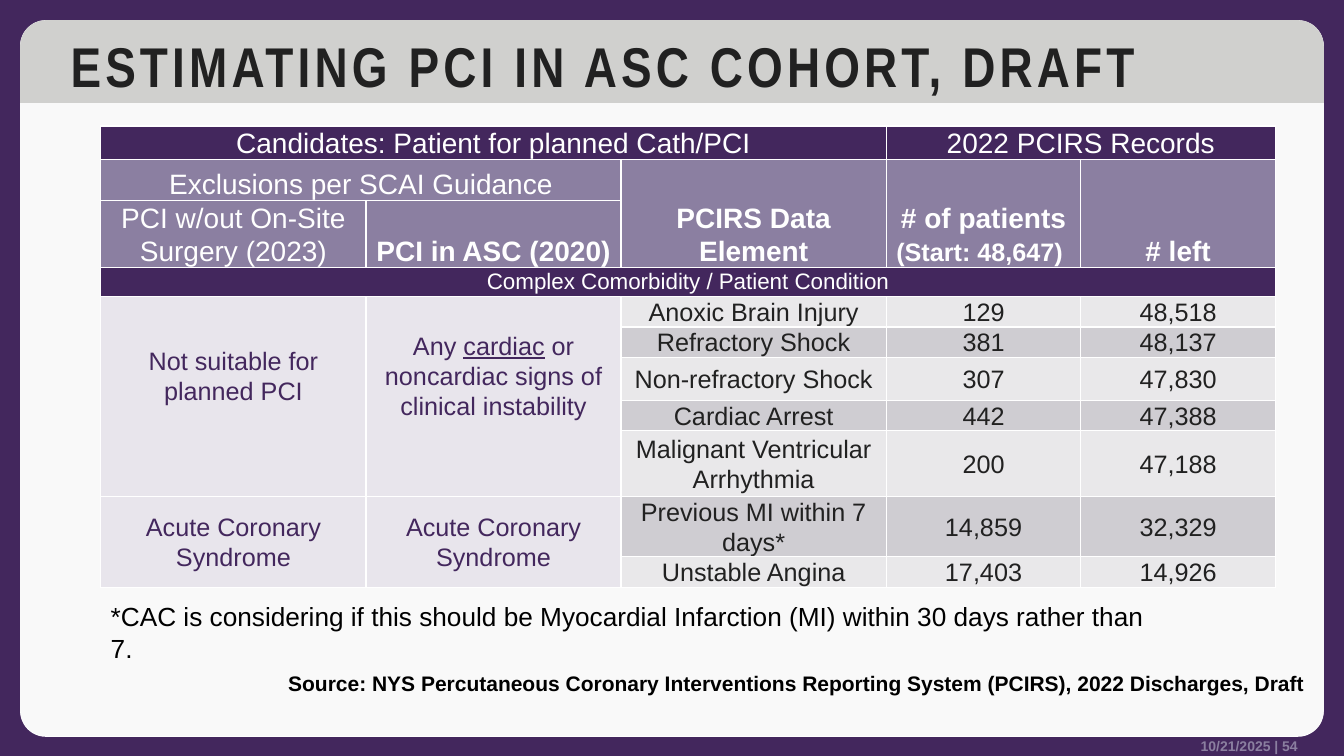
import pptx
import pptx.dml.color
import pptx.enum.shapes
import pptx.enum.text
import pptx.oxml
import pptx.oxml.ns
import pptx.util
from dataclasses import dataclass

PX = 9144  # EMU per px, 100 px to the inch


@dataclass(frozen=True)
class Theme:
    purple: str = "43275D"
    mauve: str = "8B7FA1"
    footer: str = "8B7FA0"
    lilac: str = "E8E5EC"
    light: str = "E9E8EA"
    dark: str = "CFCDD2"
    panel: str = "F9F9F9"
    band: str = "D0D0CE"
    ink: str = "212121"
    white: str = "FFFFFF"
    black: str = "000000"
    body_font: str = "Arial"
    title_font: str = "Arial Narrow"
    title: float = 40
    head: float = 20
    cell: float = 18
    section: float = 16
    note: float = 18.7
    source: float = 15
    date: float = 10


T = Theme()
RGB = pptx.dml.color.RGBColor.from_string
SHAPE = pptx.enum.shapes.MSO_SHAPE
ALIGN = pptx.enum.text.PP_ALIGN
ANCHOR = pptx.enum.text.MSO_ANCHOR


def add_run(p, text, size, color, bold=False, underline=False, font=T.body_font):
    r = p.add_run()
    r.text = text
    r.font.name = font
    r.font.size = pptx.util.Pt(size)
    r.font.color.rgb = RGB(color)
    r.font.bold = bold
    r.font.underline = underline
    return r


def fill_cell(row, col, runs, fill, color, span=(1, 1), size=T.cell, bold=False,
              anchor=ANCHOR.MIDDLE, bottom=0):
    """Each run is (text, overrides)."""
    cell = table.cell(row, col)
    if span != (1, 1):
        cell.merge(table.cell(row + span[0] - 1, col + span[1] - 1))
    cell.fill.solid()
    cell.fill.fore_color.rgb = RGB(fill)
    cell.vertical_anchor = anchor
    cell.margin_left = cell.margin_right = 6 * PX
    cell.margin_top = 0
    cell.margin_bottom = bottom * PX
    p = cell.text_frame.paragraphs[0]
    p.alignment = ALIGN.CENTER
    p.line_spacing = 1.07
    p.space_after = pptx.util.Pt(8)
    for text, overrides in runs:
        add_run(p, text, **{"size": size, "color": color, "bold": bold, **overrides})


prs = pptx.Presentation()
prs.slide_width = 1333 * PX
prs.slide_height = 750 * PX
slide = prs.slides.add_slide(prs.slide_layouts[6])
slide.background.fill.solid()
slide.background.fill.fore_color.rgb = RGB(T.purple)

# Rounded panel and title band
for kind, top, height, corners, fill in [
    (SHAPE.ROUNDED_RECTANGLE, 21, 710, [0.036], T.white),
    (SHAPE.ROUNDED_RECTANGLE, 20, 710, [0.036], T.panel),
    (SHAPE.ROUND_2_SAME_RECTANGLE, 20, 82, [0.315, 0], T.band),
]:
    sp = slide.shapes.add_shape(kind, 20 * PX, top * PX, 1293 * PX, height * PX)
    for i, corner in enumerate(corners):
        sp.adjustments[i] = corner
    sp.shadow.inherit = False
    sp.fill.solid()
    sp.fill.fore_color.rgb = RGB(fill)
    sp.line.fill.background()

# Table frame
cols = [263, 253, 263, 193, 193]
rows = [33, 41, 66, 29, 30, 30, 43, 30, 65, 60, 30]
frame = slide.shapes.add_table(len(rows), len(cols), 100 * PX, 125 * PX,
                               sum(cols) * PX, sum(rows) * PX)
table = frame.table
table.first_row = table.horz_banding = False
for i, width in enumerate(cols):
    table.columns[i].width = width * PX
for i, height in enumerate(rows):
    table.rows[i].height = height * PX

# Header cells: row, column, span, fill, bold, runs
for row, col, span, fill, bold, runs in [
    (0, 0, (1, 3), T.purple, False, [("Candidates: Patient for planned Cath/PCI", {})]),
    (0, 3, (1, 2), T.purple, False, [("2022 PCIRS Records", {})]),
    (1, 0, (1, 2), T.mauve, False, [("Exclusions per SCAI Guidance", {})]),
    (1, 2, (2, 1), T.mauve, True, [("PCIRS Data Element", {})]),
    (1, 3, (2, 1), T.mauve, True,
     [("# of patients ", {}), ("(Start: 48,647)", {"size": T.cell}), (" ", {})]),
    (1, 4, (2, 1), T.mauve, True, [("# left", {})]),
    (2, 0, (1, 1), T.mauve, False, [("PCI w/out On-Site Surgery (2023)", {})]),
    (2, 1, (1, 1), T.mauve, True, [("PCI in ASC (2020)", {})]),
]:
    fill_cell(row, col, runs, fill, T.white, span, T.head, bold, ANCHOR.BOTTOM)
fill_cell(3, 0, [("Complex Comorbidity / Patient Condition", {})], T.purple, T.white,
          (1, 5), T.section, anchor=ANCHOR.TOP)

# Exclusion cells
fill_cell(4, 0, [("Not suitable for planned PCI", {})], T.lilac, T.purple, (5, 1), bottom=42)
fill_cell(4, 1, [("Any ", {}), ("cardiac", {"underline": True}),
                 (" or noncardiac signs of clinical instability", {})],
          T.lilac, T.purple, (5, 1), bottom=42)
for col in (0, 1):
    fill_cell(9, col, [("Acute Coronary Syndrome", {})], T.lilac, T.purple, (2, 1))

# Data rows, shaded alternately
for i, record in enumerate([
    ("Anoxic Brain Injury", "129", "48,518"),
    ("Refractory Shock", "381", "48,137"),
    ("Non-refractory Shock", "307", "47,830"),
    ("Cardiac Arrest", "442", "47,388"),
    ("Malignant Ventricular Arrhythmia", "200", "47,188"),
    ("Previous MI within 7 days*", "14,859", "32,329"),
    ("Unstable Angina", "17,403", "14,926"),
]):
    for j, text in enumerate(record):
        fill_cell(4 + i, 2 + j, [(text, {})], T.dark if i % 2 else T.light, T.ink)

# White cell borders, placed ahead of the fill
for cell in table.iter_cells():
    tcPr = cell._tc.get_or_add_tcPr()
    for i, side in enumerate(("lnL", "lnR", "lnT", "lnB")):
        tcPr.insert(i, pptx.oxml.parse_xml(
            f'<a:{side} {pptx.oxml.ns.nsdecls("a")} w="12700"><a:solidFill>'
            f'<a:srgbClr val="{T.white}"/></a:solidFill></a:{side}>'))

# Title, notes and date: box, insets, wrap, anchor, alignment, text, style
for box, insets, wrap, anchor, align, text, style in [
    ((20, 26, 1293, 77), (50, 5), True, ANCHOR.MIDDLE, ALIGN.LEFT,
     "ESTIMATING PCI IN ASC COHORT, DRAFT", (T.title, T.ink, True, False, T.title_font)),
    ((276, 660, 1037, 35), (10, 5), True, ANCHOR.TOP, ALIGN.LEFT,
     "Source: NYS Percutaneous Coronary Interventions Reporting System (PCIRS), "
     "2022 Discharges, Draft", (T.source, T.black, True)),
    ((100, 591, 1070, 42), (10, 5), False, ANCHOR.TOP, ALIGN.LEFT,
     "*CAC is considering if this should be Myocardial Infarction (MI) within 30 days "
     "rather than 7.", (T.note, T.black)),
    ((819, 731, 468, 17), (0, 0), True, ANCHOR.BOTTOM, ALIGN.RIGHT,
     "10/21/2025 | 54", (T.date, T.footer, True)),
]:
    sp = slide.shapes.add_textbox(*(n * PX for n in box))
    tf = sp.text_frame
    tf.word_wrap = wrap
    tf.vertical_anchor = anchor
    tf.margin_left = tf.margin_right = insets[0] * PX
    tf.margin_top = tf.margin_bottom = insets[1] * PX
    p = tf.paragraphs[0]
    p.alignment = align
    r = add_run(p, text, *style)
    if style[0] == T.title:
        r.font._element.set("spc", "300")  # letter spacing, 3 pt

prs.save("out.pptx")
